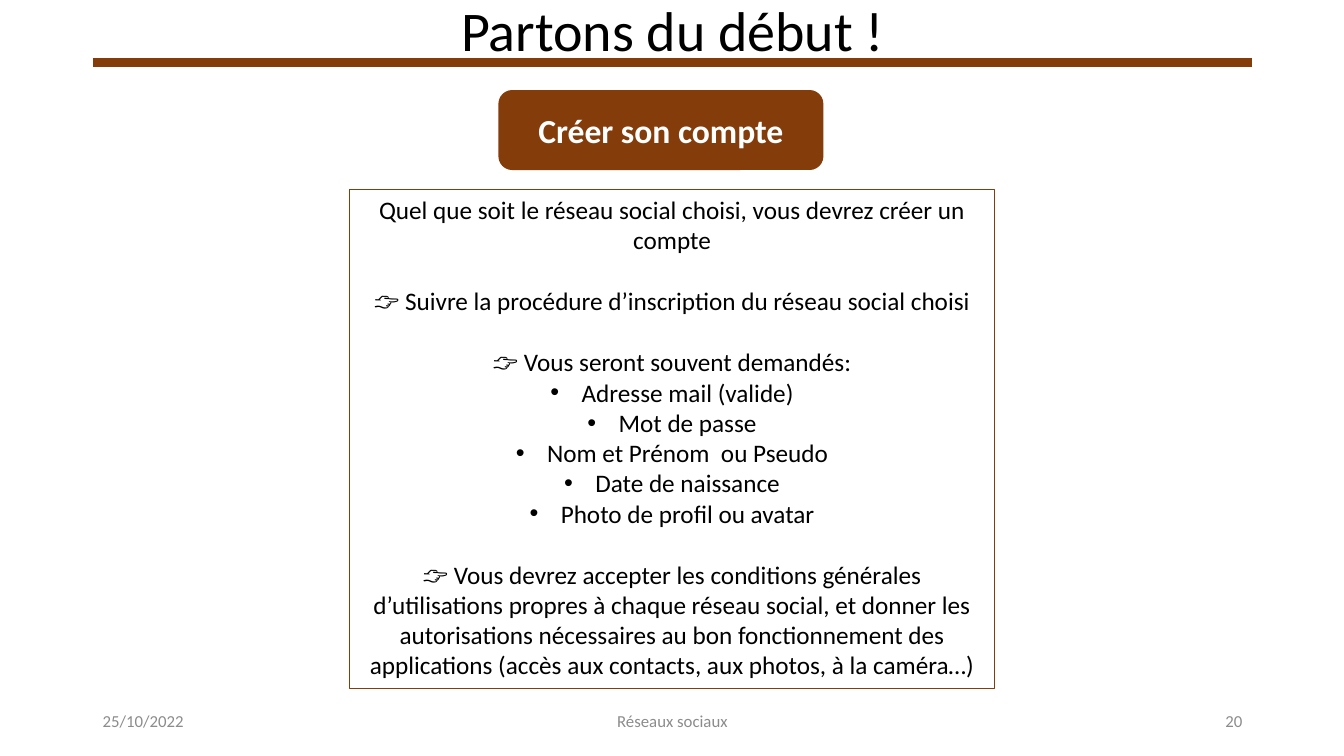
import pptx
import pptx.dml.color
import pptx.enum.shapes
import pptx.enum.text
import pptx.oxml.ns
import pptx.util
from lxml import etree
from dataclasses import dataclass

Inches, Pt = pptx.util.Inches, pptx.util.Pt
Align, Anchor = pptx.enum.text.PP_ALIGN, pptx.enum.text.MSO_ANCHOR
Shapes = pptx.enum.shapes.MSO_SHAPE

# Content
TITLE = "Partons du début !"
HEADING = "Créer son compte"
# kind, text: a "block" after the first is set apart by one line
STEPS = [
    ("block", "Quel que soit le réseau social choisi, vous devrez créer un compte"),
    ("block", "👉 Suivre la procédure d’inscription du réseau social choisi"),
    ("block", "👉 Vous seront souvent demandés:"),
    ("bullet", "Adresse mail (valide)"),
    ("bullet", "Mot de passe"),
    ("bullet", "Nom et Prénom  ou Pseudo"),
    ("bullet", "Date de naissance"),
    ("bullet", "Photo de profil ou avatar"),
    ("block", "👉 Vous devrez accepter les conditions générales d’utilisations "
              "propres à chaque réseau social, et donner les autorisations nécessaires "
              "au bon fonctionnement des applications (accès aux contacts, aux photos, "
              "à la caméra…)"),
]
# text, left, width, alignment
FOOTER = [
    ("25/10/2022", 0.92, 3, Align.LEFT),
    ("Réseaux sociaux", 4.42, 4.5, Align.CENTER),
    ("20", 9.42, 3, Align.RIGHT),
]


@dataclass(frozen=True)
class Theme:
    font: str = "Calibri"
    brown: str = "843C0B"
    black: str = "000000"
    white: str = "FFFFFF"
    grey: str = "8C8C8C"
    title: int = 40
    heading: int = 24
    body: int = 18
    footer: int = 12
    block_gap: int = 22
    bullet_indent: float = 0.31


THEME = Theme()


def color(value):
    return pptx.dml.color.RGBColor.from_string(value)


def style(para, size, ink, align=Align.CENTER, bold=False):
    para.alignment = align
    for span in para.runs:
        span.font.name = THEME.font
        span.font.size = Pt(size)
        span.font.bold = bold
        span.font.color.rgb = color(ink)


def add_label(page, text, area, size, ink, align=Align.CENTER):
    box = page.shapes.add_textbox(*map(Inches, area))
    frame = box.text_frame
    frame.word_wrap = True
    frame.vertical_anchor = Anchor.MIDDLE
    frame.text = text
    style(frame.paragraphs[0], size, ink, align)
    return frame.paragraphs[0]


def add_panel(page, kind, area, line_width, fill=None):
    box = page.shapes.add_shape(kind, *map(Inches, area))
    box.shadow.inherit = False
    if fill:
        box.fill.solid()
        box.fill.fore_color.rgb = color(fill)
    else:
        box.fill.background()
    box.line.color.rgb = color(THEME.brown)
    box.line.width = Pt(line_width)
    box.text_frame.word_wrap = True
    return box.text_frame


def add_bullet(para):
    qn = pptx.oxml.ns.qn
    props = para._p.get_or_add_pPr()
    indent = Inches(THEME.bullet_indent)
    props.set("marL", str(indent))
    props.set("indent", str(-indent))
    etree.SubElement(props, qn("a:buFont")).set("typeface", "Arial")
    etree.SubElement(props, qn("a:buChar")).set("char", "•")


def main():
    deck = pptx.Presentation()
    deck.slide_width, deck.slide_height = Inches(13.33), Inches(7.5)
    page = deck.slides.add_slide(deck.slide_layouts[6])

    # Title and footer
    title = add_label(page, TITLE, (0.92, -0.39, 11.5, 1.45), THEME.title, THEME.black)
    title.line_spacing = 0.9
    for text, left, width, align in FOOTER:
        add_label(page, text, (left, 6.95, width, 0.4), THEME.footer, THEME.grey, align)

    # Rule under the title
    rule = page.shapes.add_connector(
        pptx.enum.shapes.MSO_CONNECTOR.STRAIGHT,
        Inches(0.92), Inches(0.62), Inches(12.42), Inches(0.62))
    rule.line.color.rgb = color(THEME.brown)
    rule.line.width = Pt(6)
    etree.SubElement(rule._element.spPr, pptx.oxml.ns.qn("a:effectLst"))

    # Heading
    heading = add_panel(page, Shapes.ROUNDED_RECTANGLE, (4.95, 0.9, 3.21, 0.78),
                        1, THEME.brown)
    heading.vertical_anchor = Anchor.MIDDLE
    heading.text = HEADING
    style(heading.paragraphs[0], THEME.heading, THEME.white, bold=True)

    # Steps
    steps = add_panel(page, Shapes.RECTANGLE, (3.47, 1.88, 6.39, 4.95), 0.75)
    steps.vertical_anchor = Anchor.TOP
    steps.auto_size = pptx.enum.text.MSO_AUTO_SIZE.SHAPE_TO_FIT_TEXT
    steps.text = "\n".join(text for kind, text in STEPS)
    for index, (para, (kind, text)) in enumerate(zip(steps.paragraphs, STEPS)):
        style(para, THEME.body, THEME.black)
        if kind == "bullet":
            add_bullet(para)
        elif index > 0:
            para.space_before = Pt(THEME.block_gap)

    deck.save("out.pptx")


if __name__ == "__main__":
    main()
